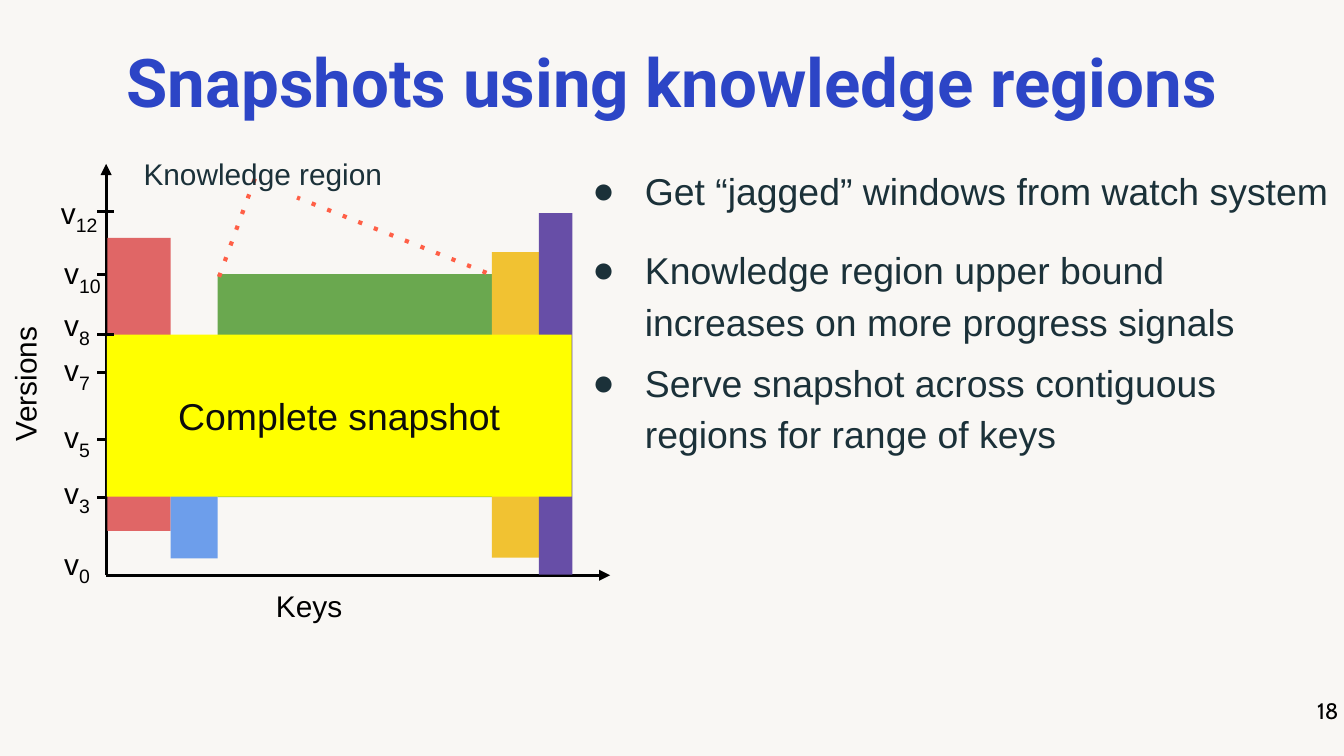
from lxml import etree
from pptx import Presentation
from pptx.dml.color import RGBColor
from pptx.enum.shapes import MSO_CONNECTOR, MSO_SHAPE
from pptx.enum.text import MSO_ANCHOR, PP_ALIGN
from pptx.oxml.ns import qn
from pptx.util import Inches, Pt

STRAIGHT = MSO_CONNECTOR.STRAIGHT
RECTANGLE = MSO_SHAPE.RECTANGLE
MIDDLE, TOP = MSO_ANCHOR.MIDDLE, MSO_ANCHOR.TOP
LEFT, CENTER, RIGHT = PP_ALIGN.LEFT, PP_ALIGN.CENTER, PP_ALIGN.RIGHT

WIDTH = 10
HEIGHT = WIDTH * 9 / 16
CELL = 0.1  # inches per column and row of the plot grid
BLACK, INK = "000000", "1B3139"

# label, left column, top row, width in columns, tick row
VERSIONS = [
    ("12", -4.35, 1, 6.3, 3.55),
    ("10", -4.1, 5.5, 6.3, 8.25),
    ("8", -4.1, 9.35, 4.7, 12.7),
    ("7", -4.1, 12.7, 4.7, 15.5),
    ("5", -4.1, 17.7, 4.7, 20.5),
    ("3", -4.1, 21.85, 4.7, 24.8),
    ("0", -4.1, 27.1, 4.7, None),
]
FRONT_TICKS = ("12", "8")

# column, row, columns, rows, fill
REGIONS = [
    (8.3, 8.2, 20.4, 16.6, "6AA84F"),
    (0.1, 15.5, 4.7, 11.8, "E06666"),
    (4.8, 12.75, 3.5, 16.6, "6D9EEB"),
    (28.7, 6.55, 3.5, 22.75, "F1C232"),
    (32.2, 3.65, 2.5, 26.9, "674EA7"),
    (0.1, 5.5, 4.7, 10.3, "E06666"),
]
SNAPSHOT = (0.05, 12.7, 34.6, 12.05, "FFFF00")
CALLOUTS = [((8.4, 8.4), (11.1, 1)), ((28.3, 8.1), (14.2, 2.5))]

# top, width and height as shares of the box, then the wording
BULLETS = [
    (0, 1, 0.23, "Get “jagged” windows from watch system"),
    (0.25, 0.91, 0.39, "Knowledge region upper bound increases on more progress signals"),
    (0.605, 0.95, 0.39, "Serve snapshot across contiguous regions for range of keys"),
]


def color(value):
    return RGBColor.from_string(value)


def style(run, size, fill, font="Arial", bold=False):
    run.font.size = Pt(size)
    run.font.name = font
    run.font.bold = bold
    run.font.color.rgb = color(fill)


def set_text(shape, text, size, fill, font="Arial", bold=False,
             align=LEFT, anchor=TOP, inset=0.1):
    frame = shape.text_frame
    frame.word_wrap = True
    frame.vertical_anchor = anchor
    frame.margin_left = frame.margin_right = Inches(inset)
    frame.margin_top = frame.margin_bottom = Inches(inset)
    frame.text = text
    paragraph = frame.paragraphs[0]
    paragraph.alignment = align
    style(paragraph.runs[0], size, fill, font, bold)
    return paragraph


def add_text(slide, box, *args, **options):
    shape = slide.shapes.add_textbox(*map(Inches, box))
    return shape, set_text(shape, *args, **options)


def add_line(slide, start, end, fill=BLACK, width=1.5, dash=None, arrow=False):
    line = slide.shapes.add_connector(STRAIGHT, *map(Inches, (*start, *end)))
    line.line.color.rgb = color(fill)
    line.line.width = Pt(width)
    outline = line.line._get_or_add_ln()
    if dash:
        etree.SubElement(outline, qn("a:prstDash"), val=dash)
    if arrow:
        etree.SubElement(outline, qn("a:tailEnd"), type="triangle")
    etree.SubElement(line._element.spPr, qn("a:effectLst"))


def add_bullet(paragraph, indent, hanging):
    properties = paragraph._p.get_or_add_pPr()
    properties.set("marL", str(Inches(indent)))
    properties.set("indent", str(-Inches(hanging)))
    bullet_color = etree.SubElement(properties, qn("a:buClr"))
    etree.SubElement(bullet_color, qn("a:srgbClr"), val=INK)
    etree.SubElement(properties, qn("a:buFont"), typeface="Arial")
    etree.SubElement(properties, qn("a:buChar"), char="●")


def add_title(slide, box):
    _, paragraph = add_text(slide, box, "Snapshots using knowledge regions", 36, "2C45C6",
                            "Roboto", True, CENTER, MIDDLE, 0)
    paragraph.line_spacing = 0.9


def add_diagram(slide, box):
    """Draw versions against keys; the box is the area between the axes."""
    left, top, width, height = box

    def point(column, row):
        return left + column * CELL, top + row * CELL

    def area(column, row, columns, rows):
        return *point(column, row), columns * CELL, rows * CELL

    def label(cells, text, fill=BLACK):
        return add_text(slide, area(*cells), text, 16, fill)

    def rectangle(column, row, columns, rows, fill):
        shape = slide.shapes.add_shape(
            RECTANGLE, *map(Inches, area(column, row, columns, rows)))
        shape.shadow.inherit = False
        shape.fill.solid()
        shape.fill.fore_color.rgb = color(fill)
        shape.line.fill.background()
        return shape

    def ticks(front):
        for version, *_, row in VERSIONS:
            if row is not None and (version in FRONT_TICKS) == front:
                add_line(slide, point(-0.65, row), point(0.55, row))

    origin = (left, top + height)
    add_line(slide, origin, (left, top), arrow=True)
    add_line(slide, origin, (left + width, top + height), arrow=True)
    versions_label, _ = label((-12.5, 12.8, 12.9, 4.7), "Versions")
    versions_label.rotation = 270
    label((11.65, 30.55, 7.9, 4.7), "Keys")

    for version, column, row, columns, _ in VERSIONS:
        _, paragraph = label((column, row, columns, 5), "v")
        subscript = paragraph.add_run()
        subscript.text = version
        style(subscript, 18, BLACK)
        subscript.font._element.set("baseline", "-25000")

    ticks(front=False)
    green, *others = REGIONS
    rectangle(*green)
    for start, end in CALLOUTS:
        add_line(slide, point(*start), point(*end), "FF5F46", 2.25, dash="dot")
    label((1.8, -1.6, 21.2, 4.7), "Knowledge region", INK)
    for region in others:
        rectangle(*region)
    set_text(rectangle(*SNAPSHOT), "Complete snapshot", 20, "0C0C0C",
             align=CENTER, anchor=MIDDLE)
    ticks(front=True)


def add_bullets(slide, box):
    left, top, width, height = box
    for offset, across, down, text in BULLETS:
        area = (left, top + offset * height, across * width, down * height)
        _, paragraph = add_text(slide, area, text, 20, INK)
        add_bullet(paragraph, 0.5, 0.39)
        paragraph.line_spacing = 1.15


def add_page_number(slide, box):
    add_text(slide, box, "18", 12, BLACK, "Cabin", align=RIGHT, inset=0)


def main():
    presentation = Presentation()
    presentation.slide_width, presentation.slide_height = Inches(WIDTH), Inches(HEIGHT)
    slide = presentation.slides.add_slide(presentation.slide_layouts[6])
    slide.background.fill.solid()
    slide.background.fill.fore_color.rgb = color("F9F7F4")
    add_title(slide, (0.34, 0.32, 9.32, 0.63))
    add_diagram(slide, (0.79, 1.22, 3.75, 3.06))
    add_bullets(slide, (4.2, 1.1, 5.89, 2.36))
    add_page_number(slide, (9.36, 5.19, 0.6, 0.43))
    presentation.save("out.pptx")


if __name__ == "__main__":
    main()
